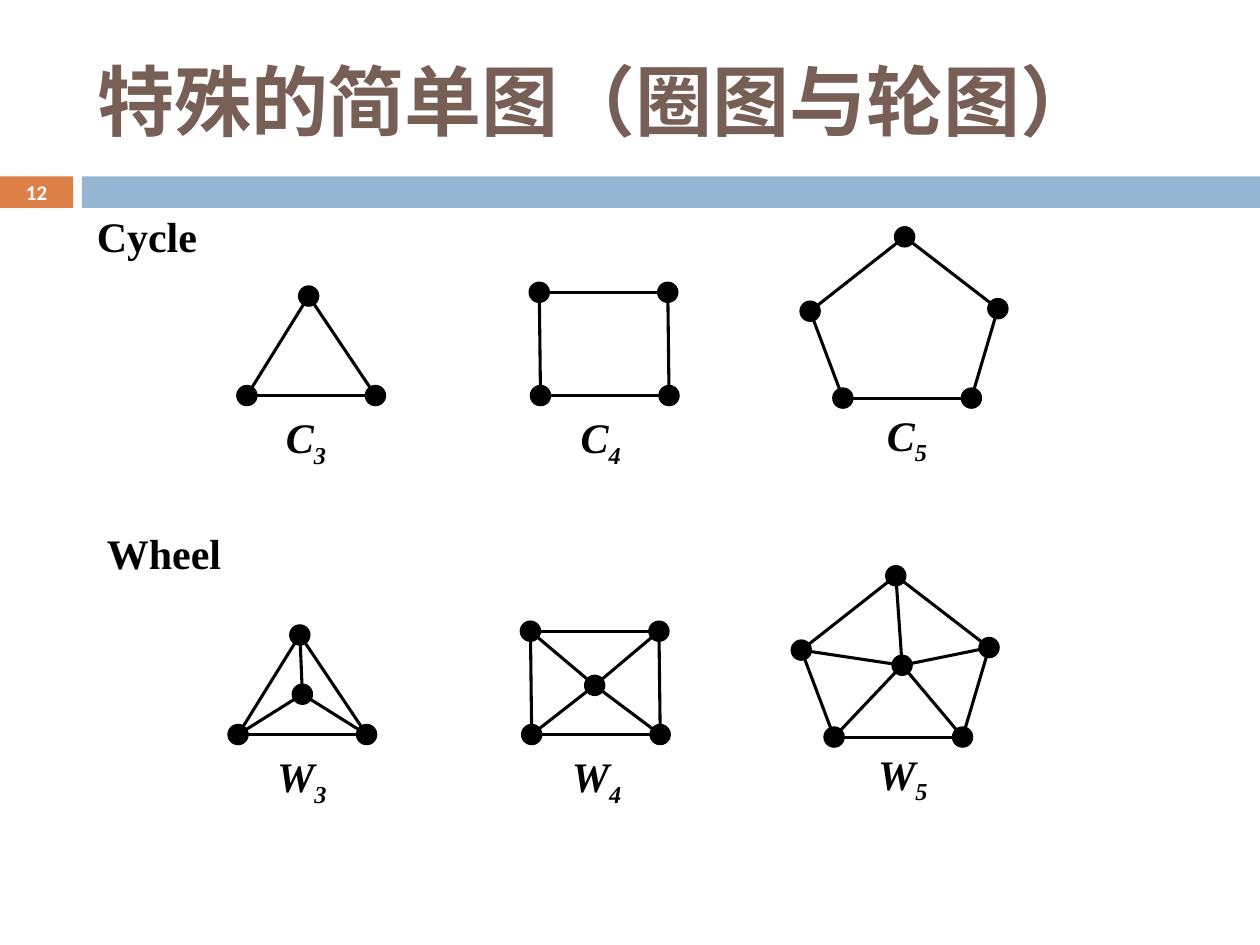
from lxml import etree
from pptx import Presentation, util as u
from pptx.dml.color import RGBColor
from pptx.enum import shapes, text
from pptx.oxml.ns import qn

deck = Presentation()
deck.slide_width, deck.slide_height = u.Inches(10), u.Inches(7.5)
slide = deck.slides.add_slide(deck.slide_layouts[5])
CELL = deck.slide_width / 100  # the slide is a grid of 100 columns by 75 rows
BLACK, SERIF = "000000", "Times New Roman"
DOT = 1.6


def cells(*counts):
    return [u.Emu(round(count * CELL)) for count in counts]


def write(words, box=None, holder=None, size=24, font=SERIF, color=BLACK, italic=False,
          align=text.PP_ALIGN.LEFT, anchor=text.MSO_ANCHOR.TOP, wrap=True, subscript=""):
    """Write bold words in a new text box, or in holder if one is given."""
    holder = holder or slide.shapes.add_textbox(*cells(*box))
    frame = holder.text_frame
    frame.word_wrap, frame.vertical_anchor = wrap, anchor
    line = frame.paragraphs[0]
    line.alignment = align
    for part in filter(None, (words, subscript)):
        run = line.add_run()
        run.text = part
        run.font.size, run.font.name = u.Pt(size), font
        run.font.bold, run.font.italic = True, italic
        run.font.color.rgb = RGBColor.from_string(color)
    if subscript:
        run.font._element.set("baseline", "-25000")


# Title and the band below it
title = slide.shapes.title
title.left, title.top, title.width, title.height = cells(6.7, 2.5, 89.2, 10.8)
write("特殊的简单图（圈图与轮图）", holder=title, size=44, font="Calibri",
      color="775F55", anchor=text.MSO_ANCHOR.MIDDLE)
for left, width, color in ((0, 5.8, "DD8047"), (6.5, 93.5, "94B6D2")):
    band = slide.shapes.add_shape(shapes.MSO_SHAPE.RECTANGLE, *cells(left, 14, width, 2.5))
    band.shadow.inherit = False
    band.fill.solid()
    band.fill.fore_color.rgb = RGBColor.from_string(color)
    band.line.fill.background()
write("12", box=(0, 13.9, 5.8, 2.7), size=12, font="Calibri", color="FFFFFF",
      align=text.PP_ALIGN.CENTER, anchor=text.MSO_ANCHOR.MIDDLE)

# Each graph: rim vertices in order, hub, and the corner of its label
graphs = [
    ([(24.5, 23.5), (29.8, 31.4), (19.6, 31.4)], (24.7, 28.2), (21.7, 32.2)),
    ([(42.8, 23.2), (53, 23.2), (53.1, 31.4), (42.9, 31.4)], (47.9, 27.5), (45.1, 32.2)),
    ([(71.8, 18.8), (79.2, 24.5), (77.1, 31.6), (66.9, 31.6), (64.3, 24.7)],
     (72.3, 25.9), (69.4, 32)),
]
# Each family: heading, its corner, label letter, shift of the graphs, spokes or not
families = [
    ("Cycle", (6.7, 16.2), "C", (0, 0), False),
    ("Wheel", (7.5, 41.4), "W", (-0.7, 26.9), True),
]
for heading, corner, letter, (right, down), has_spokes in families:
    write(heading, box=(*corner, 13.4, 5), align=text.PP_ALIGN.JUSTIFY)
    for rim, hub, (label_x, label_y) in graphs:
        edges = list(zip(rim, rim[1:] + rim[:1]))
        vertices = list(rim)
        if has_spokes:
            edges += [(hub, vertex) for vertex in rim]
            vertices.append(hub)
        for (x1, y1), (x2, y2) in edges:
            edge = slide.shapes.add_connector(
                shapes.MSO_CONNECTOR.STRAIGHT,
                *cells(x1 + right, y1 + down, x2 + right, y2 + down))
            edge.line.width = u.Pt(1.75)
            edge.line.color.rgb = RGBColor.from_string(BLACK)
            etree.SubElement(edge._element.spPr, qn("a:effectLst"))
        for x, y in vertices:
            vertex = slide.shapes.add_shape(
                shapes.MSO_SHAPE.FLOWCHART_CONNECTOR,
                *cells(x + right - DOT / 2, y + down - DOT / 2, DOT, DOT))
            vertex.shadow.inherit = False
            vertex.fill.solid()
            vertex.fill.fore_color.rgb = RGBColor.from_string(BLACK)
            vertex.line.color.rgb = RGBColor.from_string(BLACK)
            vertex.line.width = u.Pt(0.75)
        write(letter, box=(label_x + right, label_y + down, 7.9, 5.5), italic=True,
              wrap=False, subscript=str(len(rim)))

deck.save("out.pptx")
